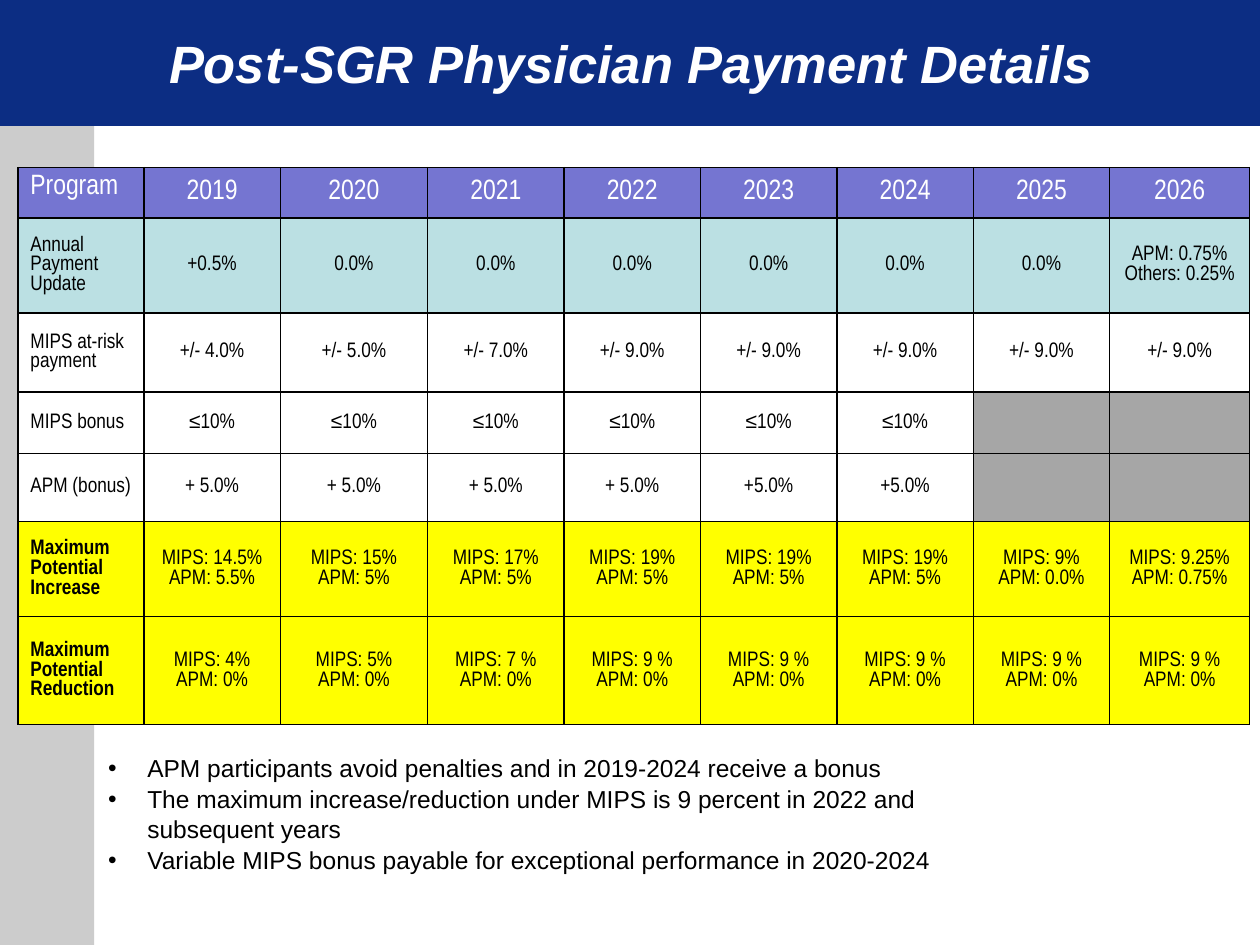
from lxml.etree import SubElement
from pptx import Presentation
from pptx.dml.color import RGBColor
from pptx.enum.shapes import MSO_SHAPE
from pptx.enum.text import MSO_ANCHOR as Anchor, PP_ALIGN as Align
from pptx.oxml.ns import qn
from pptx.util import Cm, Pt

NAVY, GREY, WHITE, BLACK = "0C2D83", "CCCCCC", "FFFFFF", "000000"
VIOLET, TEAL, YELLOW, BLANK = "7575D1", "BBE0E3", "FFFF00", "A6A6A6"
COLS = [2.54, 2.75, 2.97] + [2.75] * 5 + [2.82]
ROWS = [
    (1.01, VIOLET, ["Program"] + [str(year) for year in range(2019, 2027)]),
    (1.92, TEAL, ["Annual Payment Update", "+0.5%"] + ["0.0%"] * 6
     + ["APM: 0.75%\nOthers: 0.25%"]),
    (1.59, WHITE, ["MIPS at-risk payment", "+/- 4.0%", "+/- 5.0%", "+/- 7.0%"]
     + ["+/- 9.0%"] * 5),
    (1.24, WHITE, ["MIPS bonus"] + ["≤10%"] * 6 + [""] * 2),
    (1.37, WHITE, ["APM (bonus)"] + ["+ 5.0%"] * 4 + ["+5.0%"] * 2 + [""] * 2),
    (1.92, YELLOW, ["Maximum Potential Increase", "MIPS: 14.5%\nAPM: 5.5%",
                    "MIPS: 15%\nAPM: 5%", "MIPS: 17%\nAPM: 5%"]
     + ["MIPS: 19%\nAPM: 5%"] * 3
     + ["MIPS: 9%\nAPM: 0.0%", "MIPS: 9.25%\nAPM: 0.75%"]),
    (2.18, YELLOW, ["Maximum Potential Reduction", "MIPS: 4%\nAPM: 0%",
                    "MIPS: 5%\nAPM: 0%", "MIPS: 7 %\nAPM: 0%"]
     + ["MIPS: 9 %\nAPM: 0%"] * 5),
]
NOTES = """APM participants avoid penalties and in 2019-2024 receive a bonus
The maximum increase/reduction under MIPS is 9 percent in 2022 and subsequent years
Variable MIPS bonus payable for exceptional performance in 2020-2024"""


def rgb(color):
    """Turn a hex string into a colour."""
    return RGBColor.from_string(color)


def write(tf, text, size=12, font="Arial", color=BLACK, bold=False,
          italic=False, align=Align.LEFT, bullet=None, spacing=None):
    """Write one formatted paragraph for each line of text."""
    for i, line in enumerate(text.split("\n")):
        p = tf.add_paragraph() if i else tf.paragraphs[0]
        p.alignment = align
        if spacing:
            p.line_spacing = spacing
        if bullet:
            pPr = p._p.get_or_add_pPr()
            pPr.set("marL", str(Cm(0.79)))
            pPr.set("indent", str(-Cm(0.79)))
            SubElement(pPr, qn("a:buFont"), typeface="Arial")
            SubElement(pPr, qn("a:buChar"), char=bullet)
        r = p.add_run()
        r.text = line
        r.font.name, r.font.size = font, Pt(size)
        r.font.bold, r.font.italic = bold, italic
        r.font.color.rgb = rgb(color)


def add_band(s, box, color):
    """Add a plain filled rectangle."""
    sp = s.shapes.add_shape(MSO_SHAPE.RECTANGLE, *map(Cm, box))
    sp.shadow.inherit = False
    sp.fill.solid()
    sp.fill.fore_color.rgb = rgb(color)
    sp.line.fill.background()


def add_header(s, box):
    """Place the navy band with the title on it."""
    x, y, w, h = box
    add_band(s, box, NAVY)
    title = s.shapes.title
    title.left, title.top = Cm(x + 2.34), Cm(y)
    title.width, title.height = Cm(w - 4.62), Cm(h)
    tf = title.text_frame
    tf.vertical_anchor = Anchor.MIDDLE
    write(tf, "Post-SGR Physician Payment Details", size=30, color=WHITE,
          bold=True, italic=True, align=Align.CENTER)
    s.shapes._spTree.append(title._element)


def add_borders(cell):
    """Draw a thin black line on each side of a cell."""
    tcPr = cell._tc.get_or_add_tcPr()
    for i, side in enumerate(("a:lnL", "a:lnR", "a:lnT", "a:lnB")):
        ln = tcPr.makeelement(qn(side), {"w": str(Pt(1))})
        SubElement(SubElement(ln, qn("a:solidFill")), qn("a:srgbClr"), val=BLACK)
        tcPr.insert(i, ln)


def add_payment_table(s, x, y):
    """Place the payment table with its top left corner at x, y."""
    width, height = sum(COLS), sum(row[0] for row in ROWS)
    table = s.shapes.add_table(len(ROWS), len(COLS), Cm(x), Cm(y),
                               Cm(width), Cm(height)).table
    for column, w in zip(table.columns, COLS):
        column.width = Cm(w)
    for i, (h, fill, texts) in enumerate(ROWS):
        table.rows[i].height = Cm(h)
        for j, text in enumerate(texts):
            cell = table.cell(i, j)
            cell.fill.solid()
            cell.fill.fore_color.rgb = rgb(fill if text else BLANK)
            add_borders(cell)
            cell.vertical_anchor = Anchor.MIDDLE if i or j else Anchor.TOP
            if text:
                write(cell.text_frame, text, font="Arial Narrow",
                      size=12 if i else 16, color=BLACK if i else WHITE,
                      bold=fill == YELLOW and j == 0,
                      align=Align.CENTER if j else Align.LEFT)


def add_notes_list(s, box):
    """Place the bulleted remarks."""
    tf = s.shapes.add_textbox(*map(Cm, box)).text_frame
    tf.word_wrap = True
    write(tf, NOTES, size=14, bullet="•", spacing=1.04)


def main():
    """Build and save the slide."""
    prs = Presentation()
    prs.slide_width, prs.slide_height = Cm(25.4), Cm(19.05)
    s = prs.slides.add_slide(prs.slide_layouts[5])
    add_band(s, (0, 2.54, 1.9, 16.51), GREY)
    add_header(s, (0, 0, 25.4, 2.54))
    add_payment_table(s, 0.36, 3.38)
    add_notes_list(s, (1.93, 15.04, 18.82, 2.64))
    prs.save("out.pptx")


if __name__ == "__main__":
    main()
